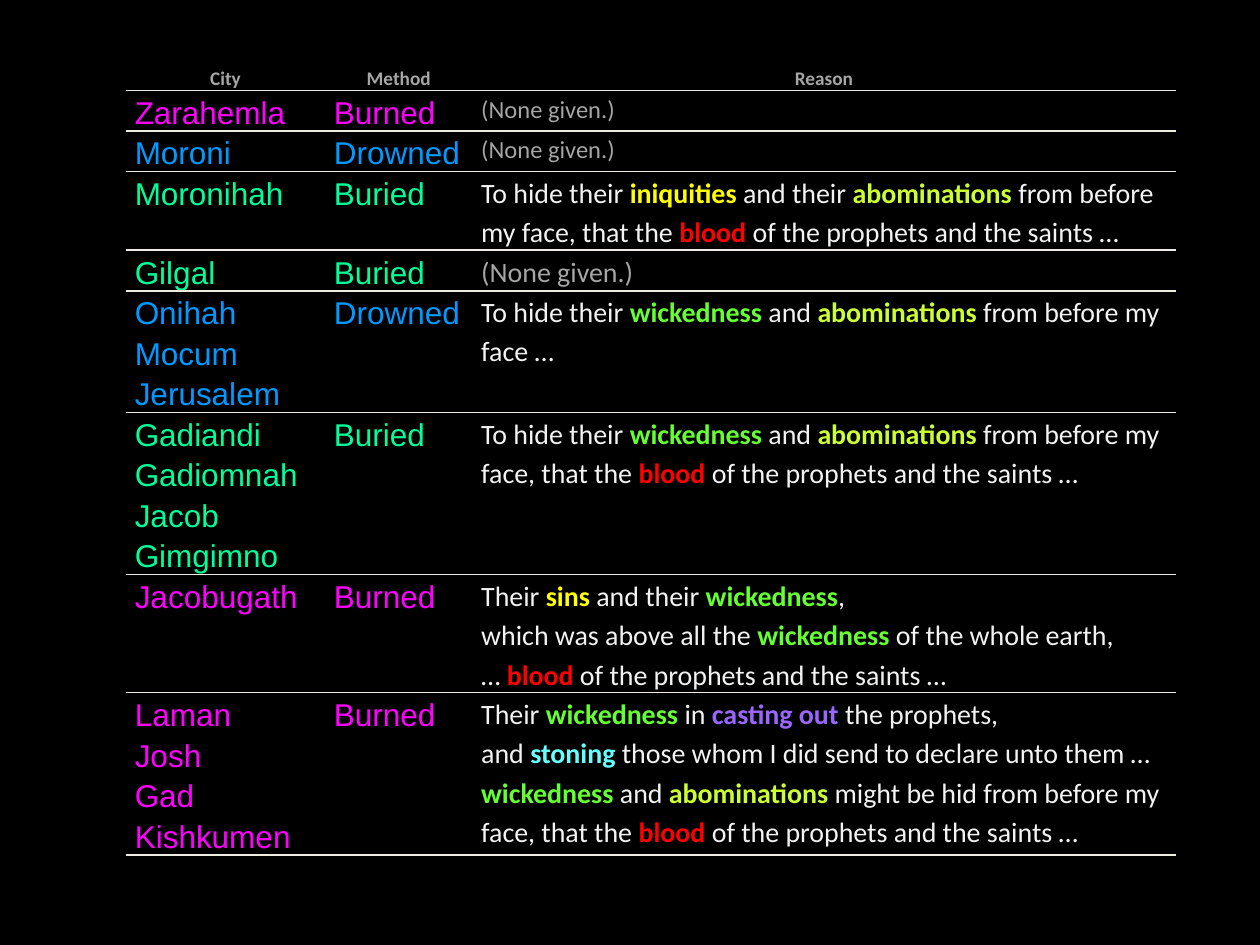
from copy import deepcopy

from lxml import etree
from pptx import Presentation
from pptx import util as u
from pptx.dml.color import RGBColor
from pptx.enum import text
from pptx.oxml.ns import qn

MAGENTA, BLUE, GREEN = "FF00FF", "0099FF", "00FF99"
GREY, WHITE, LINE = "A6A6A6", "F2F2F2", "EEECE1"
METHOD_COLOURS = {"Burned": MAGENTA, "Drowned": BLUE, "Buried": GREEN}
KEYWORD_COLOURS = {
    "iniquities": "FFFF00",
    "sins": "FFFF00",
    "abominations": "CCFF33",
    "wickedness": "66FF33",
    "blood": "FF0000",
    "casting out": "9966FF",
    "stoning": "66FFFF",
}

# Keywords between asterisks are bold and coloured
NONE_GIVEN = "(None given.)"
SAINTS = "*blood* of the prophets and the saints …"
HIDE = "To hide their *wickedness* and *abominations* from before my face"
HEADINGS = ["City", "Method", "Reason"]
CITIES = [
    # cities, method, reason, reason size
    ("Zarahemla", "Burned", NONE_GIVEN, 14),
    ("Moroni", "Drowned", NONE_GIVEN, 14),
    ("Moronihah", "Buried",
     "To hide their *iniquities* and their *abominations* from before my face, "
     "that the " + SAINTS, 16),
    ("Gilgal", "Buried", NONE_GIVEN, 16),
    ("Onihah\nMocum\nJerusalem", "Drowned", HIDE + " …", 16),
    ("Gadiandi\nGadiomnah\nJacob\nGimgimno", "Buried",
     HIDE + ", that the " + SAINTS, 16),
    ("Jacobugath", "Burned",
     "Their *sins* and their *wickedness*, \n"
     "which was above all the *wickedness* of the whole earth, \n… " + SAINTS, 16),
    ("Laman\nJosh\nGad\nKishkumen", "Burned",
     "Their *wickedness* in *casting out* the prophets, \n"
     "and *stoning* those whom I did send to declare unto them … \n"
     "*wickedness* and *abominations* might be hid from before my face, "
     "that the " + SAINTS, 16),
]


def colour(value):
    return RGBColor.from_string(value)


class SlideBuilder:
    """Holds the deck, the current page and the table style."""

    no_style = "{2D5ABB26-0587-4C30-8999-92F81FD0307C}"

    def __init__(self, width, height):
        self.deck = Presentation()
        self.deck.slide_width = u.Inches(width)
        self.deck.slide_height = u.Inches(height)
        self.page = self.deck.slides.add_slide(self.deck.slide_layouts[6])

    def background(self, fill):
        self.page.background.fill.solid()
        self.page.background.fill.fore_color.rgb = colour(fill)

    def table(self, rows, left, top, height, widths):
        """Place a table; all lengths are shares of the slide's size."""
        wide, high = self.deck.slide_width, self.deck.slide_height
        frame = self.page.shapes.add_table(
            rows, len(widths), int(left * wide), int(top * high),
            int(sum(widths) * wide), int(height * high))
        table = frame.table
        table.first_row = table.horz_banding = False
        table._tbl.tblPr.find(qn("a:tableStyleId")).text = self.no_style
        for column, share in zip(table.columns, widths):
            column.width = int(share * wide)
        for row in table.rows:
            row.height = 0  # each row grows to fit its text
        frame.height = int(height * high)
        return table

    def cell(self, cell, words, size, font, tint, bold=False, centred=False):
        cell.margin_left = cell.margin_right = u.Inches(0.07)
        cell.margin_top = cell.margin_bottom = 0
        self.rule_below(cell)
        cell.fill.background()
        para = cell.text_frame.paragraphs[0]
        para.alignment = text.PP_ALIGN.CENTER if centred else text.PP_ALIGN.LEFT
        para.line_spacing = 1.15
        para.space_before = para.space_after = u.Pt(2)
        for index, part in enumerate(words.split("*")):
            keyword = index % 2 == 1
            part_tint = KEYWORD_COLOURS[part] if keyword else tint
            for number, line in enumerate(part.split("\n")):
                if number:
                    self.line_break(para)
                if line:
                    self.span(para, line, size, font, part_tint, bold or keyword)

    def span(self, para, words, size, font, tint, bold):
        span = para.add_run()
        span.text = words
        span.font.size = u.Pt(size)
        span.font.name = font
        span.font.bold = bold
        span.font.color.rgb = colour(tint)

    def line_break(self, para):
        """Break the line, keeping the size of the text before it."""
        properties = deepcopy(para.runs[-1].font._element)
        para.add_line_break()
        para._p.findall(qn("a:br"))[-1].append(properties)

    def rule_below(self, cell):
        edge = etree.SubElement(cell._tc.get_or_add_tcPr(), qn("a:lnB"),
                                w=str(u.Pt(1)))
        fill = etree.SubElement(edge, qn("a:solidFill"))
        etree.SubElement(fill, qn("a:srgbClr"), val=LINE)


def main():
    builder = SlideBuilder(10, 7.5)
    builder.background("000000")
    table = builder.table(len(CITIES) + 1, left=1 / 10, top=1 / 15,
                          height=6.54 / 7.5, widths=[0.158, 0.117, 0.558])

    # Heading row
    for column, heading in enumerate(HEADINGS):
        builder.cell(table.cell(0, column), heading, 11, "Calibri", GREY,
                     bold=True, centred=True)

    # One row for each group of cities
    for row, (cities, method, reason, size) in enumerate(CITIES, start=1):
        tint = METHOD_COLOURS[method]
        builder.cell(table.cell(row, 0), cities, 18, "Arial", tint)
        builder.cell(table.cell(row, 1), method, 18, "Arial", tint)
        builder.cell(table.cell(row, 2), reason, size, "Calibri",
                     GREY if reason == NONE_GIVEN else WHITE)

    builder.deck.save("out.pptx")


if __name__ == "__main__":
    main()
